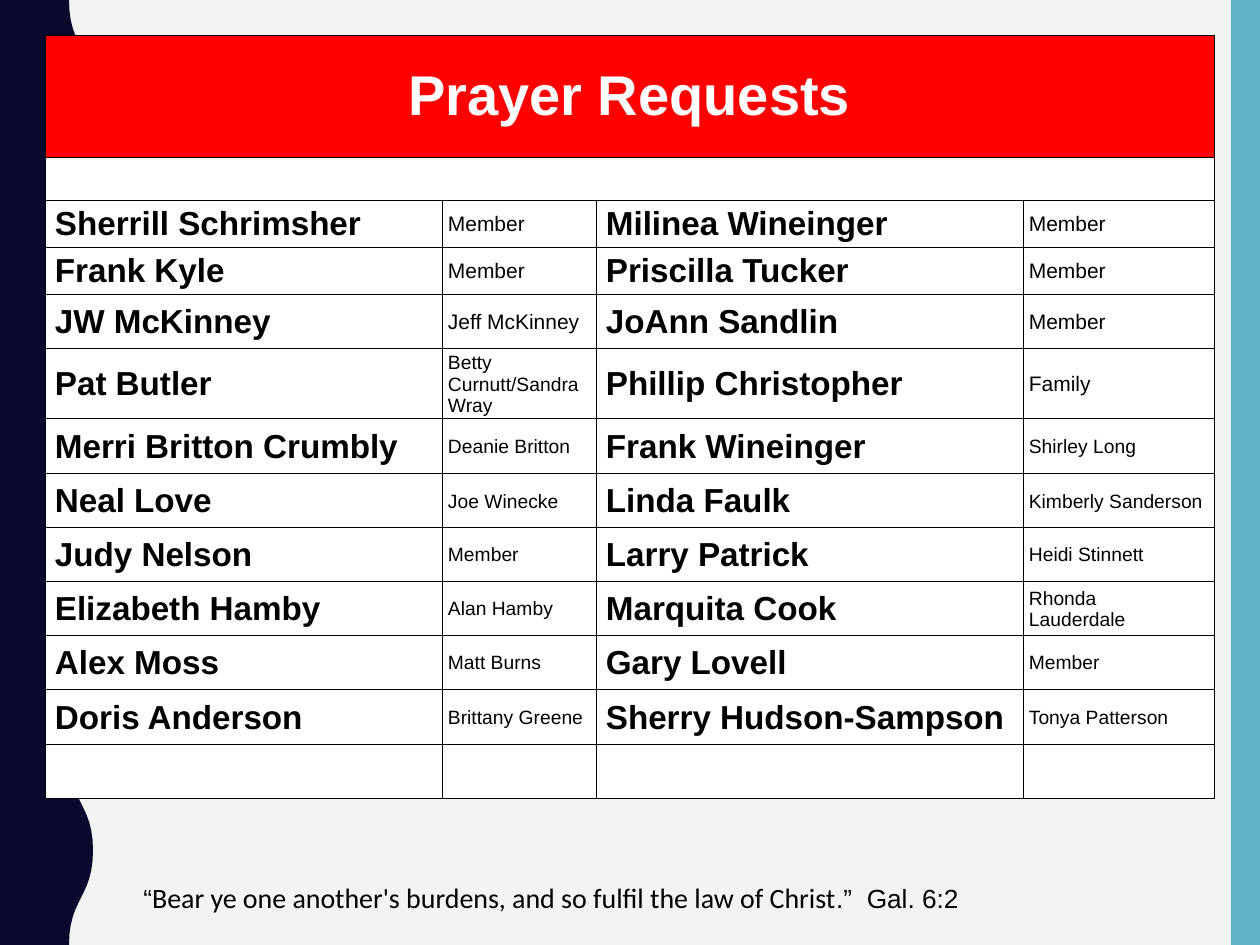
"""Build the prayer requests slide with its table of names and closing verse."""
from dataclasses import dataclass

from lxml.etree import SubElement
from pptx import Presentation
from pptx.dml.color import RGBColor
from pptx.enum.shapes import MSO_SHAPE
from pptx.enum.text import MSO_ANCHOR, PP_ALIGN
from pptx.oxml.ns import qn
from pptx.util import Emu, Pt


@dataclass(frozen=True)
class Theme:
    paper: RGBColor = RGBColor.from_string("F3F3F2")
    wave: RGBColor = RGBColor.from_string("0B082E")
    stripe: RGBColor = RGBColor.from_string("62B4C6")
    banner: RGBColor = RGBColor.from_string("FF0000")
    white: RGBColor = RGBColor.from_string("FFFFFF")
    black: RGBColor = RGBColor.from_string("000000")
    font: str = "Arial"
    verse_font: str = "Calibri"
    title: int = 32
    name: int = 19
    large_note: int = 12
    note: int = 11
    verse: int = 16
    reference: int = 15
    border: float = 0.5


def px(length):
    return Emu(round(length * 914400 / 126))


def style_cell(cell, fill, size, color, bold=False, left=1):
    cell.margin_left = px(left)
    cell.margin_right = cell.margin_top = px(1)
    cell.margin_bottom = 0
    cell.vertical_anchor = MSO_ANCHOR.MIDDLE
    properties = cell._tc.get_or_add_tcPr()
    for side in ("lnL", "lnR", "lnT", "lnB"):
        line = SubElement(properties, qn(f"a:{side}"), w=str(Pt(theme.border)))
        SubElement(SubElement(line, qn("a:solidFill")), qn("a:srgbClr"), val=str(theme.black))
    cell.fill.solid()
    cell.fill.fore_color.rgb = fill
    for paragraph in cell.text_frame.paragraphs:
        paragraph.font.size = Pt(size)
        for span in paragraph.runs:
            span.font.name = theme.font
            span.font.size = Pt(size)
            span.font.bold = bold
            span.font.color.rgb = color


theme = Theme()
requests = [
    ("Sherrill Schrimsher", "Member", "Milinea Wineinger", "Member"),
    ("Frank Kyle", "Member", "Priscilla Tucker", "Member"),
    ("JW McKinney", "Jeff McKinney", "JoAnn Sandlin", "Member"),
    ("Pat Butler", "Betty\nCurnutt/Sandra\nWray", "Phillip Christopher", "Family"),
    ("Merri Britton Crumbly", "Deanie Britton", "Frank Wineinger", "Shirley Long"),
    ("Neal Love", "Joe Winecke", "Linda Faulk", "Kimberly Sanderson"),
    ("Judy Nelson", "Member", "Larry Patrick", "Heidi Stinnett"),
    ("Elizabeth Hamby", "Alan Hamby", "Marquita Cook", "Rhonda\nLauderdale"),
    ("Alex Moss", "Matt Burns", "Gary Lovell", "Member"),
    ("Doris Anderson", "Brittany Greene", "Sherry Hudson-Sampson", "Tonya Patterson"),
    ("", "", "", ""),
]
column_widths = [397, 154, 427, 191]
row_heights = [122, 43, 47, 47, 55, 70, 55] + [54] * 4 + [55, 54]

deck = Presentation()
deck.slide_width, deck.slide_height = px(1260), px(945)
page = deck.slides.add_slide(deck.slide_layouts[6])
page.background.fill.solid()
page.background.fill.fore_color.rgb = theme.paper

stripe = page.shapes.add_shape(MSO_SHAPE.RECTANGLE, px(1231), 0, px(29), px(945))

bends, steps = 10, 12
edge = []
for bend in range(bends):
    for step in range(1, steps + 1):
        t = step / steps
        swing = 3 * t**2 - 2 * t**3
        if bend % 2:
            swing = 1 - swing
        drop = 1.5 * t * (1 - t) + t**3
        edge.append((px(69 + 24 * swing), px((bend + drop) * 945 / bends)))
builder = page.shapes.build_freeform(0, 0)
builder.add_line_segments([(px(69), 0), *edge, (0, px(945))], close=True)
wave = builder.convert_to_shape()

for shape, color in ((stripe, theme.stripe), (wave, theme.wave)):
    shape.shadow.inherit = False
    shape.fill.solid()
    shape.fill.fore_color.rgb = color
    shape.line.fill.background()

frame = page.shapes.add_table(
    len(row_heights), len(column_widths),
    px(45), px(35), px(sum(column_widths)), px(sum(row_heights)),
)
table = frame.table
table.first_row = table.horz_banding = False
for column, width in zip(table.columns, column_widths):
    column.width = px(width)
for row, height in zip(table.rows, row_heights):
    row.height = px(height)

table.cell(0, 0).text_frame.text = "Prayer Requests"
table.cell(0, 0).text_frame.paragraphs[0].alignment = PP_ALIGN.CENTER
for row_index, fill, size in ((0, theme.banner, theme.title), (1, theme.white, theme.note)):
    table.cell(row_index, 0).merge(table.cell(row_index, 3))
    for column_index in range(4):
        style_cell(table.cell(row_index, column_index), fill, size, theme.white, bold=True)

for row_index, request in enumerate(requests):
    for column_index, words in enumerate(request):
        cell = table.cell(row_index + 2, column_index)
        cell.text_frame.text = words
        if column_index % 2 == 0:
            style_cell(cell, theme.white, theme.name, theme.black, bold=True, left=10)
        else:
            large = row_index < 3 or words == "Family"
            size = theme.large_note if large else theme.note
            style_cell(cell, theme.white, size, theme.black, left=6)

verse_box = page.shapes.add_textbox(px(131), px(874), px(1021), px(47))
verse_box.text_frame.word_wrap = True
paragraph = verse_box.text_frame.paragraphs[0]
for words, font, size in (
    ("“", theme.font, theme.reference),
    ("Bear ye one another's burdens, and so fulfil the law of Christ", theme.verse_font, theme.verse),
    (".”  Gal. 6:2", theme.font, theme.reference),
):
    span = paragraph.add_run()
    span.text = words
    span.font.name = font
    span.font.size = Pt(size)
    span.font.color.rgb = theme.black

deck.save("out.pptx")
